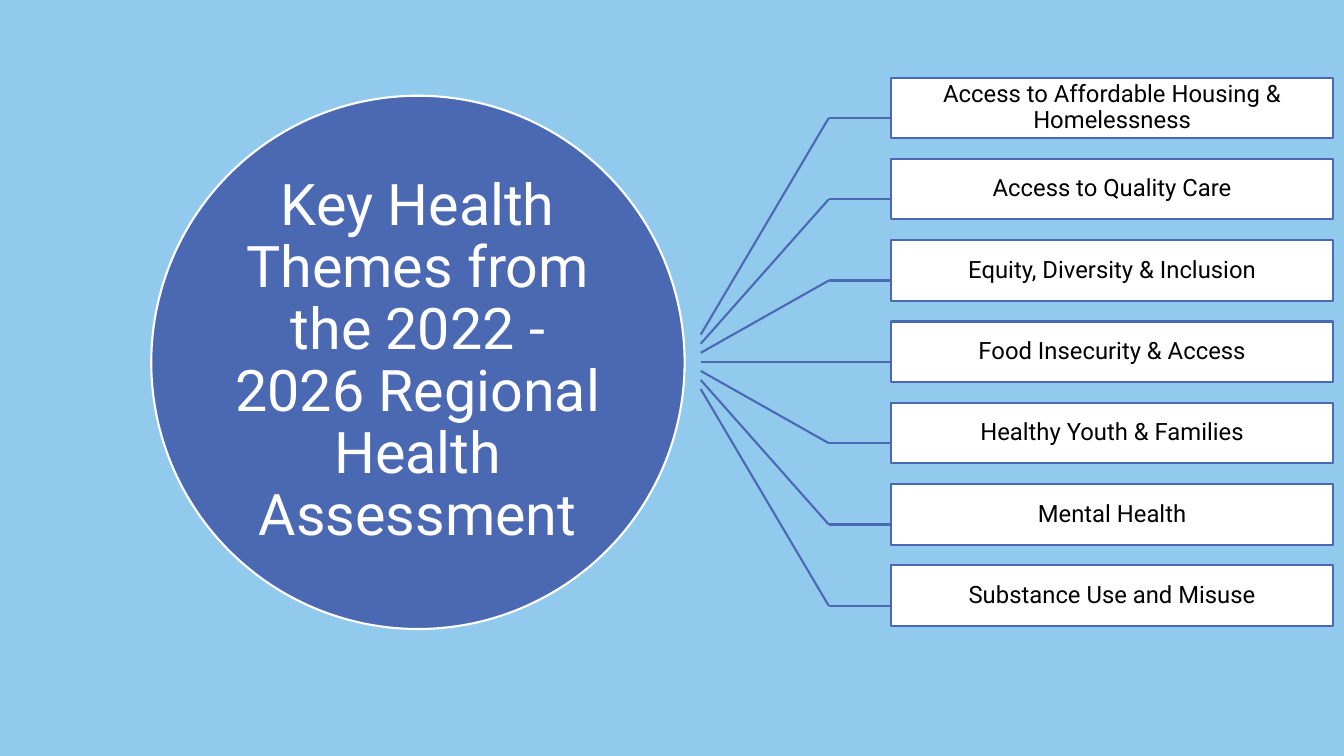
from dataclasses import dataclass

from lxml.etree import SubElement
from pptx import Presentation
from pptx.dml.color import RGBColor
from pptx.enum.shapes import MSO_CONNECTOR, MSO_SHAPE
from pptx.enum.text import MSO_ANCHOR, PP_ALIGN
from pptx.oxml.ns import qn
from pptx.slide import Slide
from pptx.util import Inches, Pt

SKY, BLUE, WHITE, BLACK = "92CAEE", "4B69B2", "FFFFFF", "000000"
FONT = "Roboto"
WEIGHT = 1.5
FAN_X, BEND_X, BOX_X = 6.95, 8.22, 8.84
MID_Y = 3.59
FAN_STEP = 0.09
ROW_STEP = 4.84 / 6
BOX_RISE = 0.4
THEMES = [
    "Access to Affordable Housing & Homelessness",
    "Access to Quality Care",
    "Equity, Diversity & Inclusion",
    "Food Insecurity & Access",
    "Healthy Youth & Families",
    "Mental Health",
    "Substance Use and Misuse",
]


@dataclass(frozen=True)
class Look:
    """Style of a filled shape and its text."""
    kind: MSO_SHAPE
    fill: str
    edge: str
    ink: str
    size: float
    inset: float


HUB = Look(MSO_SHAPE.OVAL, BLUE, WHITE, WHITE, 41, 0)
BOX = Look(MSO_SHAPE.RECTANGLE, WHITE, BLUE, BLACK, 17, 0.13)


def hue(code: str) -> RGBColor:
    """Turn a hex string into a colour."""
    return RGBColor.from_string(code)


def add_label(slide: Slide, look: Look, text: str, left: float, top: float,
              width: float, height: float) -> None:
    """Draw one filled shape with centred text."""
    shape = slide.shapes.add_shape(
        look.kind, Inches(left), Inches(top), Inches(width), Inches(height))
    shape.shadow.inherit = False
    shape.fill.solid()
    shape.fill.fore_color.rgb = hue(look.fill)
    shape.line.color.rgb = hue(look.edge)
    shape.line.width = Pt(WEIGHT)
    frame = shape.text_frame
    frame.word_wrap = True
    frame.vertical_anchor = MSO_ANCHOR.MIDDLE
    frame.margin_left = frame.margin_right = Inches(look.inset)
    frame.margin_top = frame.margin_bottom = Inches(look.inset)
    para = frame.paragraphs[0]
    para.alignment = PP_ALIGN.CENTER
    para.line_spacing = 0.9
    run = para.add_run()
    run.text = text
    run.font.name = FONT
    run.font.size = Pt(look.size)
    run.font.color.rgb = hue(look.ink)


def add_line(slide: Slide, x1: float, y1: float, x2: float, y2: float) -> None:
    """Draw one straight blue line."""
    line = slide.shapes.add_connector(
        MSO_CONNECTOR.STRAIGHT, Inches(x1), Inches(y1), Inches(x2), Inches(y2))
    line.line.color.rgb = hue(BLUE)
    line.line.width = Pt(WEIGHT)
    SubElement(line._element.spPr, qn("a:effectLst"))


def main() -> None:
    """Build the slide and save it."""
    deck = Presentation()
    deck.slide_width, deck.slide_height = Inches(13.33), Inches(7.5)
    slide = deck.slides.add_slide(deck.slide_layouts[6])
    slide.background.fill.solid()
    slide.background.fill.fore_color.rgb = hue(SKY)

    title = "Key Health Themes from the 2022 - 2026 Regional Health Assessment"
    add_label(slide, HUB, title, 1.5, 0.95, 5.29, 5.29)
    for row, theme in enumerate(THEMES):
        rank = row - len(THEMES) // 2
        bend_y = MID_Y + rank * ROW_STEP
        add_line(slide, FAN_X, MID_Y + rank * FAN_STEP, BEND_X, bend_y)
        add_line(slide, BEND_X, bend_y, BOX_X, bend_y)
        add_label(slide, BOX, theme, BOX_X, bend_y - BOX_RISE, 4.38, 0.6)

    deck.save("out.pptx")


if __name__ == "__main__":
    main()
